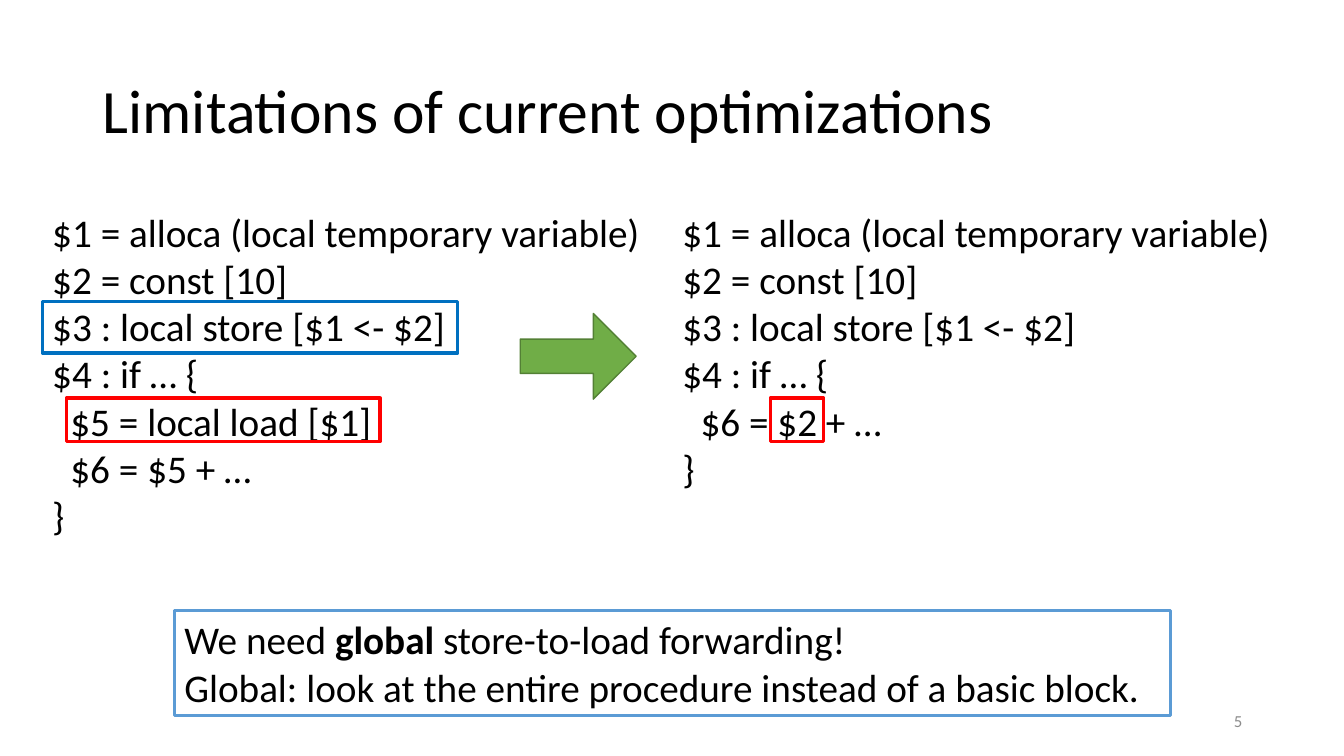
from dataclasses import dataclass

from pptx import Presentation
from pptx.dml.color import RGBColor
from pptx.enum.shapes import MSO_SHAPE
from pptx.enum.text import MSO_ANCHOR, PP_ALIGN
from pptx.util import Inches, Pt


@dataclass(frozen=True)
class Theme:
    font: str = "Calibri"
    title_size: int = 44
    body_size: int = 28
    number_size: int = 12
    text: str = "000000"
    muted: str = "8C8C8C"
    callout: str = "5B9BD5"
    store: str = "0070C0"
    load: str = "FF0000"
    arrow: str = "70AD47"
    arrow_line: str = "538035"


THEME = Theme()

# Code lines as (indent level, text)
CODE_START = [
    (0, "$1 = alloca (local temporary variable)"),
    (0, "$2 = const [10]"),
    (0, "$3 : local store [$1 <- $2]"),
    (0, "$4 : if … {"),
]
CODE_BEFORE = CODE_START + [(1, "$5 = local load [$1]"), (1, "$6 = $5 + …"), (0, "}")]
CODE_AFTER = CODE_START + [(1, "$6 = $2 + …"), (0, "}")]

CALLOUT = [
    [("We need ", False), ("global", True), (" store-to-load forwarding!", False)],
    [("Global: look at the entire procedure instead of a basic block.", False)],
]


def style_font(font, size, color=THEME.text):
    font.name = THEME.font
    font.size = Pt(size)
    font.color.rgb = RGBColor.from_string(color)


def add_title(slide, box, text):
    title = slide.shapes.title
    title.left, title.top, title.width, title.height = map(Inches, box)
    title.text_frame.text = text
    title.text_frame.vertical_anchor = MSO_ANCHOR.MIDDLE
    paragraph = title.text_frame.paragraphs[0]
    paragraph.alignment = PP_ALIGN.LEFT
    paragraph.line_spacing = 0.9
    style_font(paragraph.font, THEME.title_size)


def add_frame(slide, box, color, width):
    frame = slide.shapes.add_shape(MSO_SHAPE.RECTANGLE, *map(Inches, box))
    frame.shadow.inherit = False
    frame.fill.background()
    frame.line.color.rgb = RGBColor.from_string(color)
    frame.line.width = Pt(width)
    return frame


def add_code(slide, box, lines, marks):
    """Place code lines, then marks whose boxes are offset from the code box."""
    text_frame = slide.shapes.add_textbox(*map(Inches, box)).text_frame
    text_frame.word_wrap = True
    for index, (level, text) in enumerate(lines):
        paragraph = text_frame.paragraphs[0] if index == 0 else text_frame.add_paragraph()
        paragraph.text = text
        style_font(paragraph.font, THEME.body_size)
        if level:
            paragraph._p.get_or_add_pPr().set("marL", str(Inches(0.18 * level)))
    for (left, top, width, height), color in marks:
        add_frame(slide, (box[0] + left, box[1] + top, width, height), color, 2.5)


def add_arrow(slide, box):
    arrow = slide.shapes.add_shape(MSO_SHAPE.RIGHT_ARROW, *map(Inches, box))
    arrow.shadow.inherit = False
    arrow.adjustments[0] = 0.4
    arrow.fill.solid()
    arrow.fill.fore_color.rgb = RGBColor.from_string(THEME.arrow)
    arrow.line.color.rgb = RGBColor.from_string(THEME.arrow_line)
    arrow.line.width = Pt(1)


def add_callout(slide, box, lines):
    text_frame = add_frame(slide, box, THEME.callout, 2).text_frame
    text_frame.word_wrap = True
    text_frame.vertical_anchor = MSO_ANCHOR.TOP
    for index, pieces in enumerate(lines):
        paragraph = text_frame.paragraphs[0] if index == 0 else text_frame.add_paragraph()
        paragraph.alignment = PP_ALIGN.LEFT
        style_font(paragraph.font, THEME.body_size)
        for text, bold in pieces:
            run = paragraph.add_run()
            run.text = text
            style_font(run.font, THEME.body_size)
            run.font.bold = bold


def add_slide_number(slide, box, number):
    text_frame = slide.shapes.add_textbox(*map(Inches, box)).text_frame
    text_frame.word_wrap = True
    text_frame.vertical_anchor = MSO_ANCHOR.MIDDLE
    paragraph = text_frame.paragraphs[0]
    paragraph.text = str(number)
    paragraph.alignment = PP_ALIGN.RIGHT
    style_font(paragraph.font, THEME.number_size, THEME.muted)


def main():
    presentation = Presentation()
    presentation.slide_width = Inches(13.33)
    presentation.slide_height = Inches(7.5)
    slide = presentation.slides.add_slide(presentation.slide_layouts[5])

    add_title(slide, (0.92, 0.4, 11.5, 1.45), "Limitations of current optimizations")

    # Code before and after forwarding
    add_code(slide, (0.42, 2.02, 6.24, 3.4), CODE_BEFORE, [
        ((0, 0.97, 4.12, 0.51), THEME.store),
        ((0.24, 1.93, 3.11, 0.43), THEME.load),
    ])
    add_code(slide, (6.67, 2.02, 6.24, 2.93), CODE_AFTER, [
        ((0.97, 1.93, 0.53, 0.43), THEME.load),
    ])
    add_arrow(slide, (5.16, 3.11, 1.15, 0.85))

    # Conclusion and slide number
    add_callout(slide, (1.73, 6.06, 9.88, 1.04), CALLOUT)
    add_slide_number(slide, (9.42, 6.95, 3, 0.4), 5)

    presentation.save("out.pptx")


if __name__ == "__main__":
    main()
